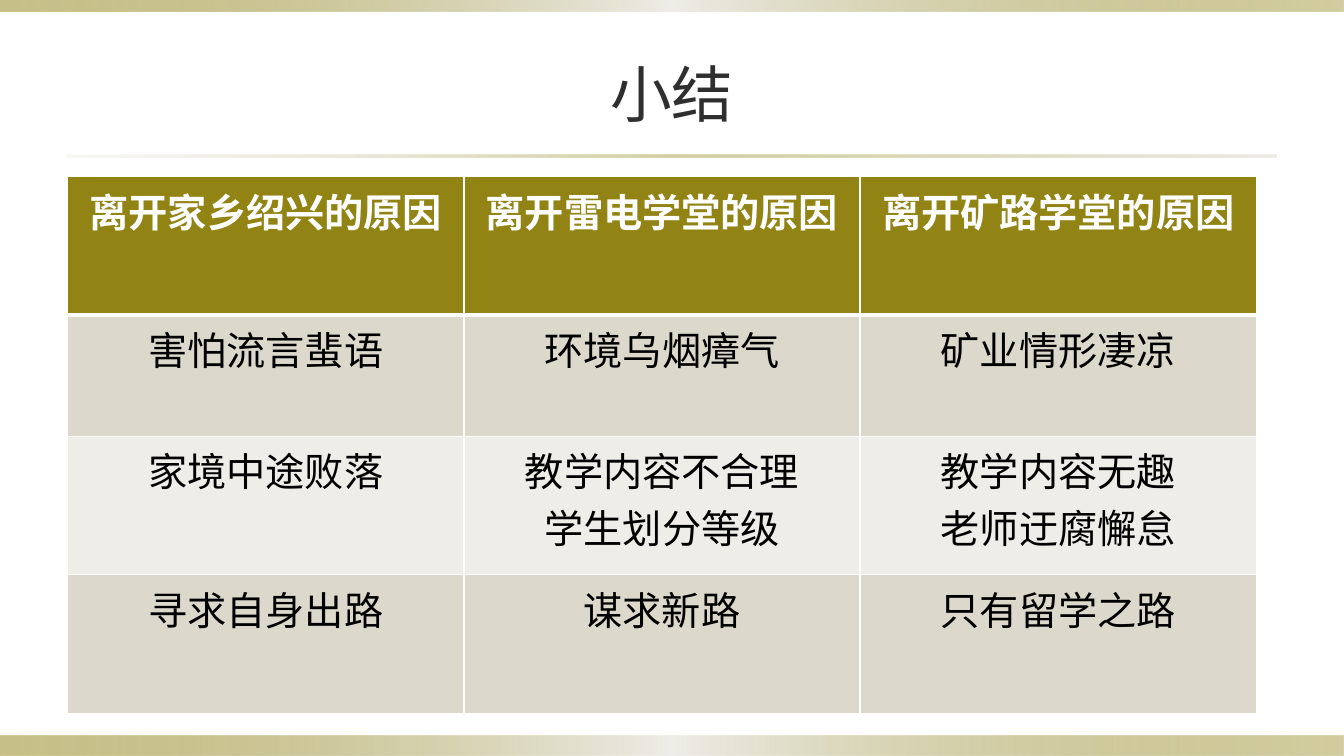
from lxml import etree
from pptx import Presentation
from pptx.dml.color import RGBColor
from pptx.enum.shapes import MSO_SHAPE
from pptx.enum.text import MSO_ANCHOR, PP_ALIGN
from pptx.oxml.ns import qn
from pptx.util import Pt

RECT = MSO_SHAPE.RECTANGLE
MIDDLE = MSO_ANCHOR.MIDDLE
CENTER = PP_ALIGN.CENTER
TITLE_ONLY = 5

OLIVE, SAND, PALE = "918415", "DCD9CC", "EEEDE8"
WHITE, BLACK, INK = "FFFFFF", "000000", "2F2F2F"
BAR_STOPS = [(0, OLIVE, 50), (50, PALE, 100), (100, OLIVE, 40)]
RULE_STOPS = [(0, SAND, 20), (50, OLIVE, 40), (100, SAND, 50)]

ROW_HEIGHTS = [99, 86.4, 99, 99]
COLUMN_WIDTH = 283
REASONS = [
    ["离开家乡绍兴的原因", "离开雷电学堂的原因", "离开矿路学堂的原因"],
    ["害怕流言蜚语", "环境乌烟瘴气", "矿业情形凄凉"],
    ["家境中途败落", "教学内容不合理\n学生划分等级", "教学内容无趣\n老师迂腐懈怠"],
    ["寻求自身出路", "谋求新路", "只有留学之路"],
]


def color(value):
    """Turn a hex string into a colour."""
    return RGBColor.from_string(value)


class SummarySlide:
    """Hold the style and the current slide."""

    font = "Cabin"

    def __init__(self, deck):
        """Add a title-only page to the deck."""
        self.page = deck.slides.add_slide(deck.slide_layouts[TITLE_ONLY])

    def add_lines(self, frame, text, size, ink, bold=False):
        """Fill a text frame with one centred paragraph per line."""
        for index, line in enumerate(text.split("\n")):
            para = frame.add_paragraph() if index else frame.paragraphs[0]
            para.alignment = CENTER
            span = para.add_run()
            span.text = line
            span.font.name = self.font
            span.font.size = Pt(size)
            span.font.bold = bold
            span.font.color.rgb = color(ink)

    def band(self, left, top, width, height, stops):
        """Draw a rectangle with a horizontal translucent gradient."""
        box = self.page.shapes.add_shape(RECT, Pt(left), Pt(top), Pt(width), Pt(height))
        box.shadow.inherit = False
        box.line.fill.background()
        box.fill.gradient()
        box.fill.gradient_angle = 0
        stop_list = box.element.spPr.find(".//" + qn("a:gsLst"))
        for old_stop in list(stop_list):
            stop_list.remove(old_stop)
        for position, value, opacity in stops:
            stop = etree.SubElement(stop_list, qn("a:gs"), pos=str(position * 1000))
            tint = etree.SubElement(stop, qn("a:srgbClr"), val=value)
            etree.SubElement(tint, qn("a:alpha"), val=str(opacity * 1000))

    def title(self, text, left, top, width, height):
        """Place and fill the title."""
        box = self.page.shapes.title
        box.left, box.top, box.width, box.height = Pt(left), Pt(top), Pt(width), Pt(height)
        box.text_frame.vertical_anchor = MIDDLE
        self.add_lines(box.text_frame, text, 44, INK)

    def border(self, cell, top, bottom):
        """Give a cell white borders of the given top and bottom widths."""
        properties = cell._tc.get_or_add_tcPr()
        sides = [("a:lnL", 1), ("a:lnR", 1), ("a:lnT", top), ("a:lnB", bottom)]
        for index, (side, width) in enumerate(sides):
            edge = etree.Element(qn(side), w=str(Pt(width)))
            fill = etree.SubElement(edge, qn("a:solidFill"))
            etree.SubElement(fill, qn("a:srgbClr"), val=WHITE)
            properties.insert(index, edge)

    def table(self, rows, left, top):
        """Draw the table with a dark header and alternating rows."""
        columns = len(rows[0])
        table = self.page.shapes.add_table(
            len(rows), columns, Pt(left), Pt(top),
            Pt(COLUMN_WIDTH * columns), Pt(sum(ROW_HEIGHTS))).table
        for column in table.columns:
            column.width = Pt(COLUMN_WIDTH)
        for r, texts in enumerate(rows):
            table.rows[r].height = Pt(ROW_HEIGHTS[r])
            header = r == 0
            shade = OLIVE if header else SAND if r % 2 else PALE
            for c, text in enumerate(texts):
                cell = table.cell(r, c)
                cell.fill.solid()
                cell.fill.fore_color.rgb = color(shade)
                self.border(cell, 3 if r == 1 else 1, 3 if header else 1)
                self.add_lines(cell.text_frame, text, 28, WHITE if header else BLACK, header)


def main():
    """Build the deck and save it."""
    deck = Presentation()
    deck.slide_width, deck.slide_height = Pt(960), Pt(540)
    slide = SummarySlide(deck)
    slide.band(0, 525.6, 960, 14.4, BAR_STOPS)
    slide.band(0, 0, 960, 8.6, BAR_STOPS)
    slide.band(48, 110.6, 864, 1.8, RULE_STOPS)
    slide.title("小结", 48, 21.6, 864, 90)
    slide.table(REASONS, 48.4, 126.2)
    deck.save("out.pptx")


if __name__ == "__main__":
    main()
